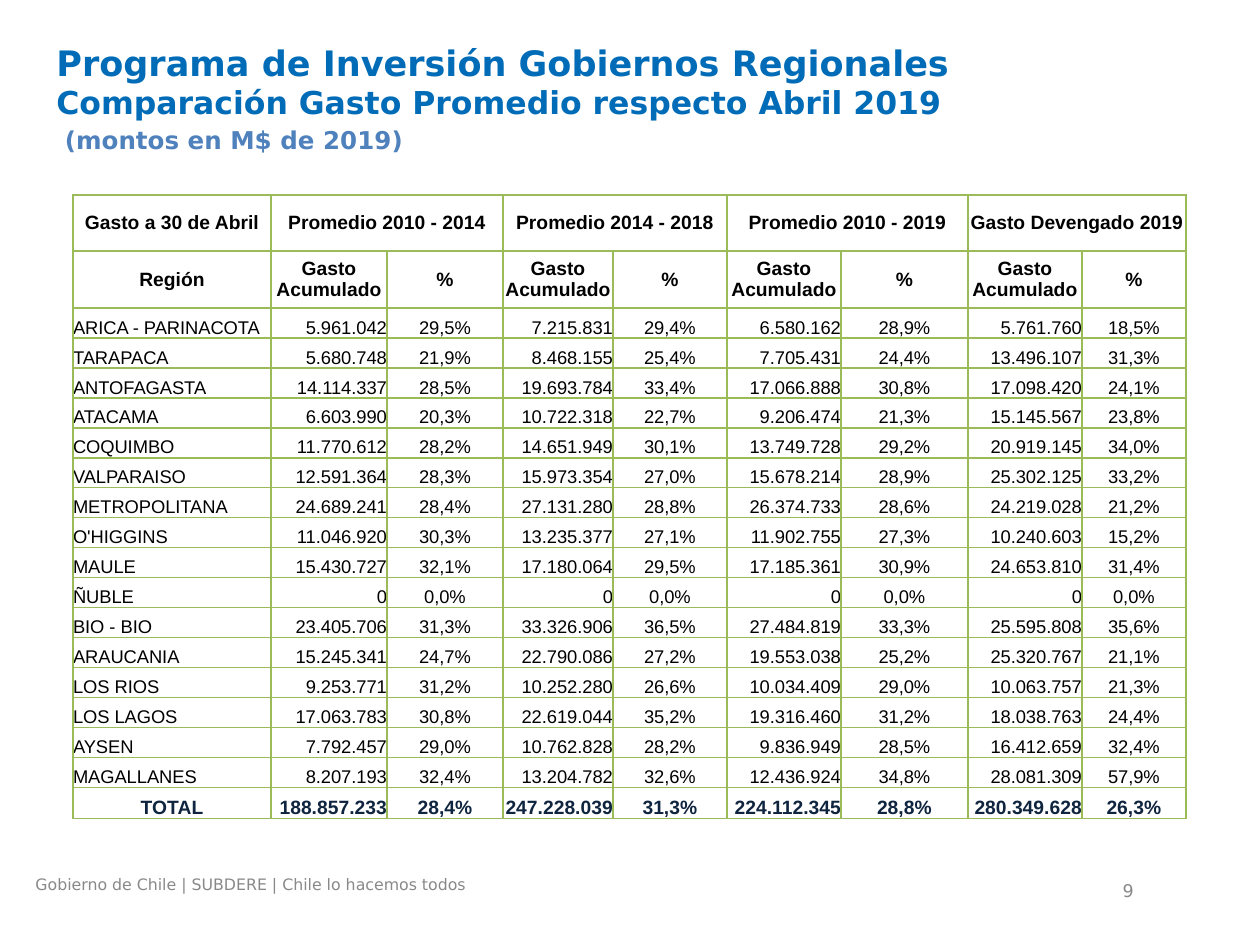
from lxml.etree import SubElement
from pptx import Presentation
from pptx.dml.color import RGBColor
from pptx.enum.text import MSO_ANCHOR, PP_ALIGN
from pptx.oxml.ns import qn
from pptx.util import Pt

PX = 914400 // 126
BLUE = RGBColor(0x00, 0x6C, 0xB7)
LIGHT_BLUE = RGBColor(0x4F, 0x81, 0xBD)
GRAY = RGBColor(0x89, 0x89, 0x89)
BLACK = RGBColor(0x00, 0x00, 0x00)
NAVY = RGBColor(0x0F, 0x24, 0x3E)
GREEN = RGBColor(0x9B, 0xBB, 0x59)

COL_WIDTHS = [198, 116, 116, 110, 114, 114, 127, 114, 104]
ROW_HEIGHTS = [56, 57] + [30] * 16 + [31]
PERIODS = ["Promedio 2010 - 2014", "Promedio 2014 - 2018",
           "Promedio 2010 - 2019", "Gasto Devengado 2019"]
REGIONS = [
    "ARICA - PARINACOTA|5.961.042|29,5%|7.215.831|29,4%|6.580.162|28,9%|5.761.760|18,5%",
    "TARAPACA|5.680.748|21,9%|8.468.155|25,4%|7.705.431|24,4%|13.496.107|31,3%",
    "ANTOFAGASTA|14.114.337|28,5%|19.693.784|33,4%|17.066.888|30,8%|17.098.420|24,1%",
    "ATACAMA|6.603.990|20,3%|10.722.318|22,7%|9.206.474|21,3%|15.145.567|23,8%",
    "COQUIMBO|11.770.612|28,2%|14.651.949|30,1%|13.749.728|29,2%|20.919.145|34,0%",
    "VALPARAISO|12.591.364|28,3%|15.973.354|27,0%|15.678.214|28,9%|25.302.125|33,2%",
    "METROPOLITANA|24.689.241|28,4%|27.131.280|28,8%|26.374.733|28,6%|24.219.028|21,2%",
    "O'HIGGINS|11.046.920|30,3%|13.235.377|27,1%|11.902.755|27,3%|10.240.603|15,2%",
    "MAULE|15.430.727|32,1%|17.180.064|29,5%|17.185.361|30,9%|24.653.810|31,4%",
    "ÑUBLE|0|0,0%|0|0,0%|0|0,0%|0|0,0%",
    "BIO - BIO|23.405.706|31,3%|33.326.906|36,5%|27.484.819|33,3%|25.595.808|35,6%",
    "ARAUCANIA|15.245.341|24,7%|22.790.086|27,2%|19.553.038|25,2%|25.320.767|21,1%",
    "LOS RIOS|9.253.771|31,2%|10.252.280|26,6%|10.034.409|29,0%|10.063.757|21,3%",
    "LOS LAGOS|17.063.783|30,8%|22.619.044|35,2%|19.316.460|31,2%|18.038.763|24,4%",
    "AYSEN|7.792.457|29,0%|10.762.828|28,2%|9.836.949|28,5%|16.412.659|32,4%",
    "MAGALLANES|8.207.193|32,4%|13.204.782|32,6%|12.436.924|34,8%|28.081.309|57,9%",
]
TOTAL = "TOTAL|188.857.233|28,4%|247.228.039|31,3%|224.112.345|28,8%|280.349.628|26,3%"


def write(p, text, size, color, font="DejaVu Sans", bold=False,
          align=PP_ALIGN.LEFT, before=0):
    p.alignment = align
    p.space_before = Pt(before)
    r = p.add_run()
    r.text = text
    r.font.name = font
    r.font.size = Pt(size)
    r.font.bold = bold
    r.font.color.rgb = color


def add_text_box(s, x, y, w, h, anchor=MSO_ANCHOR.TOP):
    tf = s.shapes.add_textbox(x * PX, y * PX, w * PX, h * PX).text_frame
    tf.word_wrap = True
    tf.vertical_anchor = anchor
    return tf


def add_title(s):
    tf = add_text_box(s, 44, 35, 1125, 142)
    p = tf.paragraphs[0]
    write(p, "Programa de Inversión Gobiernos Regionales", 20, BLUE, bold=True)
    write(tf.add_paragraph(), "Comparación Gasto Promedio respecto Abril 2019",
          18, BLUE, bold=True)
    write(tf.add_paragraph(), " (montos en M$ de 2019)", 14, LIGHT_BLUE,
          bold=True, before=2)


def set_borders(cell):
    tc_pr = cell._tc.get_or_add_tcPr()
    for i, side in enumerate(("lnL", "lnR", "lnT", "lnB")):
        ln = SubElement(tc_pr, qn(f"a:{side}"), w=str(Pt(1)))
        fill = SubElement(ln, qn("a:solidFill"))
        SubElement(fill, qn("a:srgbClr"), val=str(GREEN))
        tc_pr.insert(i, ln)


def fill_row(table, row, texts, anchor=MSO_ANCHOR.BOTTOM, aligns=None,
             size=11, color=BLACK, bold=True):
    for col, text in enumerate(texts):
        if text:
            cell = table.cell(row, col)
            cell.vertical_anchor = anchor
            write(cell.text_frame.paragraphs[0], text, size, color, "Arial",
                  bold, aligns[col] if aligns else PP_ALIGN.CENTER)


def add_spending_table(s):
    table = s.shapes.add_table(len(ROW_HEIGHTS), len(COL_WIDTHS), 73 * PX, 195 * PX,
                               sum(COL_WIDTHS) * PX, sum(ROW_HEIGHTS) * PX).table
    table.first_row = table.horz_banding = False
    for col, w in zip(table.columns, COL_WIDTHS):
        col.width = w * PX
    for row, h in zip(table.rows, ROW_HEIGHTS):
        row.height = h * PX
    for cell in table.iter_cells():
        cell.margin_left = cell.margin_right = 0
        cell.margin_top = cell.margin_bottom = 0
        cell.fill.background()
        set_borders(cell)

    top = ["Gasto a 30 de Abril"]
    for i, period in enumerate(PERIODS):
        col = 1 + 2 * i
        table.cell(0, col).merge(table.cell(0, col + 1))
        top += [period, ""]
    fill_row(table, 0, top, MSO_ANCHOR.MIDDLE)
    fill_row(table, 1, ["Región"] + ["Gasto Acumulado", "%"] * len(PERIODS),
             MSO_ANCHOR.MIDDLE)

    figures = [PP_ALIGN.RIGHT, PP_ALIGN.CENTER] * len(PERIODS)
    for row, line in enumerate(REGIONS, start=2):
        fill_row(table, row, line.split("|"), aligns=[PP_ALIGN.LEFT] + figures,
                 size=10.5, bold=False)
    fill_row(table, len(ROW_HEIGHTS) - 1, TOTAL.split("|"),
             aligns=[PP_ALIGN.CENTER] + figures, color=NAVY)


def add_footer(s):
    tf = add_text_box(s, 852, 878, 294, 26, MSO_ANCHOR.MIDDLE)
    write(tf.paragraphs[0], "9", 10, GRAY, align=PP_ALIGN.RIGHT)
    tf = add_text_box(s, 23, 869, 816, 34)
    write(tf.paragraphs[0], "Gobierno de Chile | SUBDERE | Chile lo hacemos todos",
          9, GRAY)


def main():
    prs = Presentation()
    prs.slide_width = 1260 * PX
    prs.slide_height = 945 * PX
    s = prs.slides.add_slide(prs.slide_layouts[6])
    add_title(s)
    add_footer(s)
    add_spending_table(s)
    prs.save("out.pptx")


if __name__ == "__main__":
    main()
